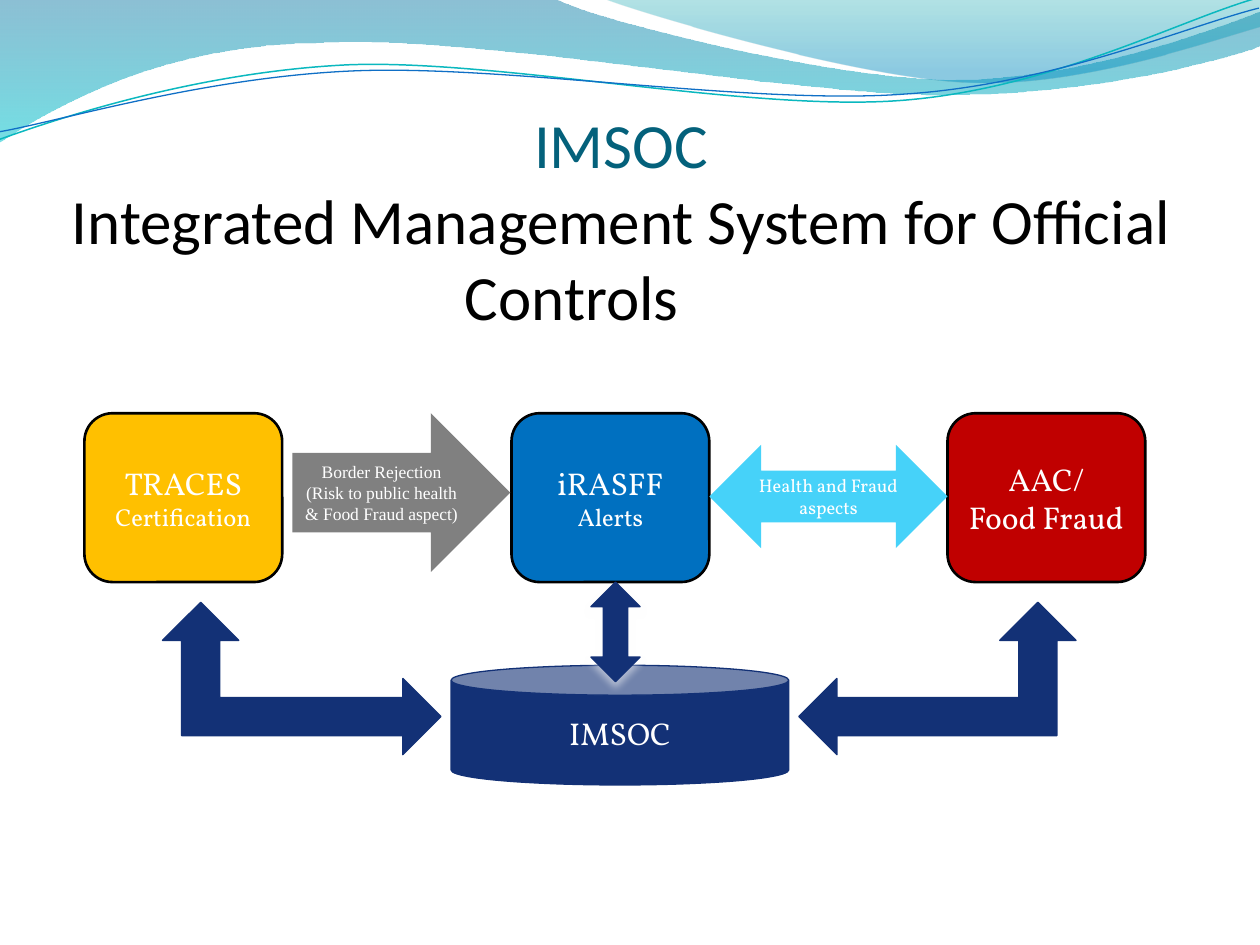
import lxml.etree
import pptx
import pptx.dml.color
import pptx.enum.shapes
import pptx.enum.text
import pptx.oxml.ns
import pptx.util

Inches = pptx.util.Inches
Pt = pptx.util.Pt
qn = pptx.oxml.ns.qn
SHAPES = pptx.enum.shapes.MSO_SHAPE
ALIGN = pptx.enum.text.PP_ALIGN
ANCHOR = pptx.enum.text.MSO_ANCHOR

NAVY = "133176"
WHITE = "FFFFFF"
SERIF = "Vollkorn"


def color(hex_string):
    return pptx.dml.color.RGBColor.from_string(hex_string)


def add_run(paragraph, text, size, font_name, hex_color):
    run = paragraph.add_run()
    run.text = text
    run.font.size = Pt(size)
    run.font.name = font_name
    run.font.color.rgb = color(hex_color)


def set_line(shape, hex_color, width):
    shape.line.color.rgb = color(hex_color)
    shape.line.width = Pt(width)


def set_gradient(shape, stops):
    """Fill from top to bottom; each stop is (position, colour, opacity in percent)."""
    shape.fill.gradient()
    shape.fill.gradient_angle = 270
    for stop, (position, hex_color, opacity) in zip(shape.fill.gradient_stops, stops):
        stop.position = position
        stop.color.rgb = color(hex_color)
        alpha = lxml.etree.SubElement(stop._gs.find(qn("a:srgbClr")), qn("a:alpha"))
        alpha.set("val", str(opacity * 1000))


def set_glowing_shadow(shape, hex_color, opacity):
    effects = shape._element.spPr.find(qn("a:effectLst"))
    shadow = lxml.etree.SubElement(effects, qn("a:outerShdw"), blurRad=str(Pt(4.5)),
                                   dist=str(Pt(3)), dir="5400000", rotWithShape="0")
    shadow_color = lxml.etree.SubElement(shadow, qn("a:srgbClr"), val=hex_color)
    lxml.etree.SubElement(shadow_color, qn("a:alpha"), val=str(opacity * 1000))


def add_outline(slide, left, top, start, segments, close):
    """Two numbers make a straight segment, six make a cubic curve."""
    points = [pair for segment in segments for pair in zip(segment[::2], segment[1::2])]
    builder = slide.shapes.build_freeform(Inches(left + start[0]), Inches(top + start[1]))
    builder.add_line_segments([(Inches(left + x), Inches(top + y)) for x, y in points], close=close)
    shape = builder.convert_to_shape()
    shape.shadow.inherit = False
    # Join each three points of a curved segment into one curve
    steps = iter(list(shape._element.iter(qn("a:lnTo"))))
    for segment in segments:
        members = [next(steps) for _ in segment[::2]]
        if len(members) == 3:
            curve = lxml.etree.Element(qn("a:cubicBezTo"))
            members[0].addprevious(curve)
            for member in members:
                curve.append(member[0])
                member.getparent().remove(member)
    return shape


def add_waves(slide, left, top):
    # Translucent bands
    bands = [
        ((0, -0.01),
         [(4.4, -0.01), (4.76, 0.17, 6.64, 0.63, 7.58, 0.63), (8.53, 0.63, 9.58, 0.26, 10, 0.09),
          (10.01, 0.36), (9.83, 0.44, 8.7, 0.76, 7.46, 0.75), (6.22, 0.75, 3.82, 0.28, 2.57, 0.34),
          (1.29, 0.35, 0.46, 0.83, -0.01, 1.13)],
         [(0, "0074A1", 45), (1, "00C6CF", 55)]),
        ((4.79, -0.01),
         [(5.09, 0.11, 6.82, 0.62, 7.69, 0.65), (8.56, 0.69, 9.61, 0.32, 10, 0.21), (10, 0)],
         [(0, "00A1A9", 30), (0.8, "008BBF", 45)]),
    ]
    for start, segments, stops in bands:
        band = add_outline(slide, left, top, start, segments, True)
        set_gradient(band, stops)
        band.line.fill.background()

    # Thin wave lines, slightly turned
    lines = [
        ((-0.02, 0.87),
         [(0.47, 0.72, 1.58, 0.41, 2.77, 0.41), (3.96, 0.42, 5.91, 0.93, 7.12, 0.9),
          (8.32, 0.87, 9.39, 0.36, 10, 0.22)], "0AB8BF", 0.85),
        ((-0.02, 0.81),
         [(0.46, 0.75, 1.64, 0.45, 2.83, 0.46), (4.03, 0.47, 5.96, 0.88, 7.16, 0.85),
          (8.35, 0.83, 9.42, 0.42, 10.01, 0.3)], "0F6FC6", 0.75),
    ]
    for start, segments, hex_color, width in lines:
        wave = add_outline(slide, left, top, start, segments, False)
        wave.rotation = 357.3
        wave.fill.background()
        set_line(wave, hex_color, width)


def add_title(slide, left, top, width, height):
    box = slide.shapes.add_textbox(Inches(left), Inches(top), Inches(width), Inches(height))
    frame = box.text_frame
    frame.word_wrap = True
    frame.vertical_anchor = ANCHOR.BOTTOM
    frame.margin_left = frame.margin_right = frame.margin_bottom = 0
    heading = frame.paragraphs[0]
    heading.alignment = ALIGN.CENTER
    add_run(heading, "IMSOC", 36, "Calibri", "04617B")
    heading.add_line_break()
    add_run(heading, "Integrated Management System for Official", 36, "Calibri", "000000")
    # The last line sits left of the centre
    ending = frame.add_paragraph()
    ending.alignment = ALIGN.LEFT
    ending._p.get_or_add_pPr().set("marL", str(Inches(3.26)))
    add_run(ending, "Controls", 36, "Calibri", "000000")


def add_block(slide, kind, box, fill, line=None, paragraphs=()):
    """Add a filled shape; paragraphs are lists of (text, size, font) runs."""
    shape = slide.shapes.add_shape(kind, *[Inches(length) for length in box])
    shape.shadow.inherit = False
    shape.fill.solid()
    shape.fill.fore_color.rgb = color(fill)
    if line:
        set_line(shape, *line)
    else:
        shape.line.fill.background()
    frame = shape.text_frame
    frame.word_wrap = True
    frame.vertical_anchor = ANCHOR.MIDDLE
    for index, runs in enumerate(paragraphs):
        paragraph = frame.add_paragraph() if index else frame.paragraphs[0]
        paragraph.alignment = ALIGN.CENTER
        for text, size, font_name in runs:
            add_run(paragraph, text, size, font_name, WHITE)
    return shape


def add_system_diagram(slide, left, top):
    # Three systems
    systems = [
        (0, "FFC000", [[("TRACES", 18, SERIF)], [("Certification", 14, SERIF)]]),
        (3.39, "0070C0", [[("iRASFF ", 18, SERIF), ("Alerts", 14, SERIF)]]),
        (6.85, "C00000", [[("AAC/", 18, SERIF)], [("Food Fraud", 18, SERIF)]]),
    ]
    for offset, fill, paragraphs in systems:
        add_block(slide, SHAPES.ROUNDED_RECTANGLE, (left + offset, top, 1.57, 1.34),
                  fill, ("000000", 1.5), paragraphs)

    # Border rejection flow
    add_block(slide, SHAPES.RIGHT_ARROW, (left + 1.65, top, 1.73, 1.26), "808080", None,
              [[("Border Rejection (Risk to public health & Food Fraud aspect)", 10, "Times New Roman")]])

    # Shared database and its links
    navy_line = (NAVY, 0.75)
    add_block(slide, SHAPES.CAN, (left + 2.91, top + 2, 2.68, 0.95), NAVY, navy_line,
              [[("IMSOC", 18, SERIF)]])
    add_block(slide, SHAPES.LEFT_UP_ARROW, (left + 5.67, top + 1.5, 2.2, 1.21), NAVY, navy_line)
    mirrored = add_block(slide, SHAPES.LEFT_UP_ARROW, (left + 0.62, top + 1.5, 2.21, 1.21),
                         NAVY, navy_line)
    mirrored._element.spPr.xfrm.set("flipH", "1")
    link = add_block(slide, SHAPES.UP_DOWN_ARROW, (left + 4.02, top + 1.34, 0.39, 0.79),
                     NAVY, navy_line)
    set_glowing_shadow(link, WHITE, 48)

    # Health and fraud exchange
    add_block(slide, SHAPES.LEFT_RIGHT_ARROW, (left + 4.96, top + 0.25, 1.89, 0.82), "46D2F9", None,
              [[("Health and Fraud aspects", 10.5, SERIF)]])


def main():
    presentation = pptx.Presentation()
    presentation.slide_width = Inches(10)
    presentation.slide_height = Inches(7.5)
    slide = presentation.slides.add_slide(presentation.slide_layouts[6])
    add_waves(slide, 0, 0)
    add_title(slide, 0.43, 0.99, 9, 1.65)
    add_system_diagram(slide, 0.67, 3.28)
    presentation.save("out.pptx")


if __name__ == "__main__":
    main()
